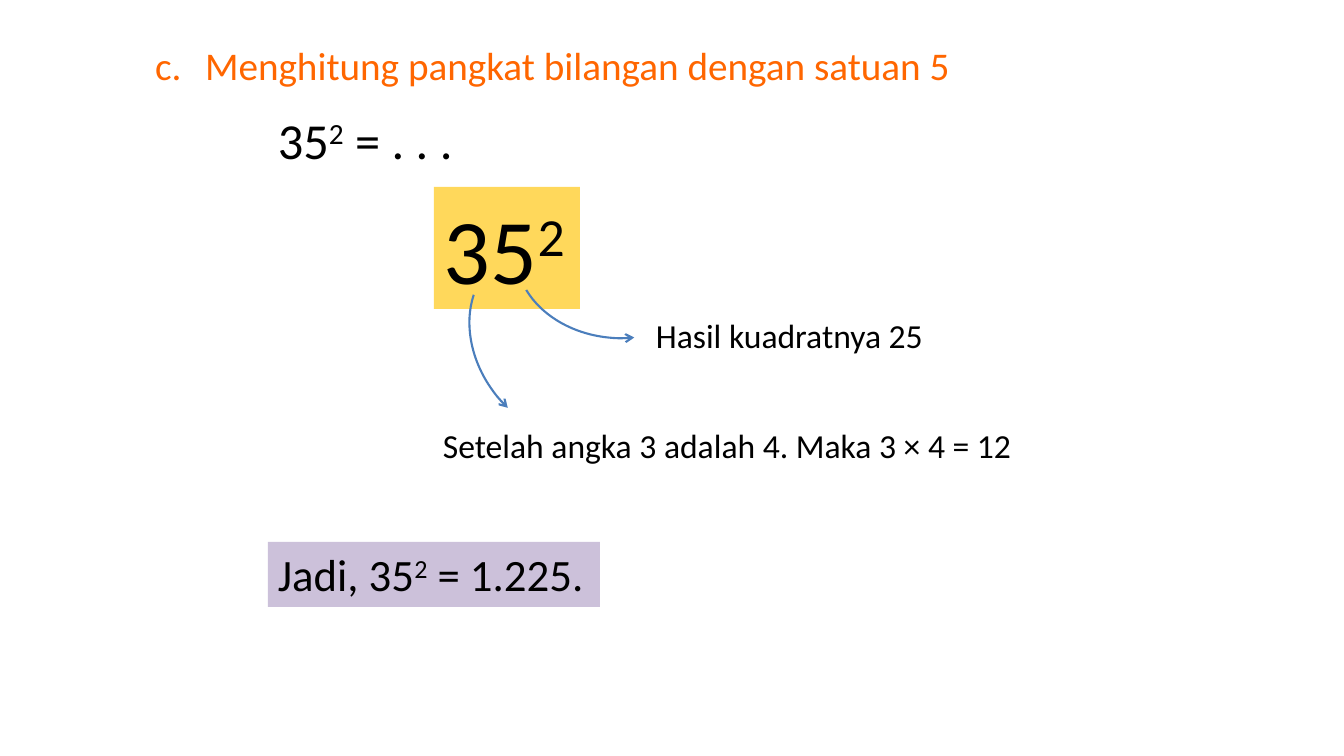
from dataclasses import dataclass

from lxml import etree
from pptx import Presentation
from pptx import util as u
from pptx.dml.color import RGBColor
from pptx.enum import shapes, text
from pptx.oxml.ns import qn

SCALE = 914400 / 100.8
FONT = "Calibri"
HUES = {
    "title": "FF6600",
    "ink": "000000",
    "gold": "FFD85B",
    "lilac": "CCC1DA",
    "arrow": "4B7EBC",
}


@dataclass
class Label:
    words: str
    left: int
    top: int
    width: int
    height: int
    size: int
    fill: str = ""


@dataclass
class Arc:
    left: int
    top: int
    turn: float


LABELS = [
    Label("35^2^ = . . .", 268, 104, 199, 72, 36),
    Label("35^2", 434, 187, 146, 122, 66, "gold"),
    Label("Hasil kuadratnya 25", 646, 310, 289, 50, 24),
    Label("Setelah angka 3 adalah 4. Maka 3 × 4 = 12", 433, 420, 596, 50, 24),
    Label("Jadi, 35^2^ = 1.225.", 268, 542, 332, 65, 32, "lilac"),
]
ARCS = [Arc(516, 178, 185.1), Arc(456, 263, 234.6)]
ARC_SIZE = 202, 160
ARC_ENDS = 151.58, 201.29


def px(count: int) -> int:
    return round(count * SCALE)


def hue(name: str) -> RGBColor:
    return RGBColor.from_string(HUES[name])


def write(shape, words: str, *, size: int, color: str = "ink", tab: int = 0) -> None:
    frame = shape.text_frame
    frame.word_wrap = False
    frame.auto_size = text.MSO_AUTO_SIZE.SHAPE_TO_FIT_TEXT
    frame.vertical_anchor = text.MSO_ANCHOR.TOP
    para = frame.paragraphs[0]
    para.alignment = text.PP_ALIGN.LEFT
    if tab:
        stops = etree.SubElement(para._p.get_or_add_pPr(), qn("a:tabLst"))
        etree.SubElement(stops, qn("a:tab"), pos=str(u.Inches(tab / 100.8)), algn="l")
    for index, part in enumerate(words.split("^")):
        run = para.add_run()
        run.text = part
        run.font.name = FONT
        run.font.size = u.Pt(size)
        run.font.color.rgb = hue(color)
        if index % 2:
            run._r.get_or_add_rPr().set("baseline", "30000")


def draw_label(slide, label: Label) -> None:
    place = [px(n) for n in (label.left, label.top, label.width, label.height)]
    if label.fill:
        shape = slide.shapes.add_shape(shapes.MSO_SHAPE.RECTANGLE, *place)
        shape.shadow.inherit = False
        shape.fill.solid()
        shape.fill.fore_color.rgb = hue(label.fill)
        shape.line.fill.background()
    else:
        shape = slide.shapes.add_textbox(*place)
    write(shape, label.words, size=label.size)


def draw_arc(slide, arc: Arc) -> None:
    place = [px(n) for n in (arc.left, arc.top, *ARC_SIZE)]
    shape = slide.shapes.add_shape(shapes.MSO_SHAPE.ARC, *place)
    shape.adjustments[0], shape.adjustments[1] = ARC_ENDS
    shape.rotation = arc.turn
    shape.shadow.inherit = False
    shape.fill.background()
    shape.line.color.rgb = hue("arrow")
    shape.line.width = u.Pt(1.5)
    etree.SubElement(shape.line._get_or_add_ln(), qn("a:headEnd"), type="arrow")


def main() -> None:
    deck = Presentation()
    deck.slide_width, deck.slide_height = px(1344), px(756)
    slide = deck.slides.add_slide(deck.slide_layouts.get_by_name("Title Only"))
    title = slide.shapes.title
    title.left, title.top, title.width, title.height = map(px, (145, 36, 825, 57))
    write(
        title,
        "c.\tMenghitung pangkat bilangan dengan satuan 5",
        size=28,
        color="title",
        tab=50,
    )
    for label in LABELS:
        draw_label(slide, label)
    for arc in ARCS:
        draw_arc(slide, arc)
    deck.save("out.pptx")


if __name__ == "__main__":
    main()
